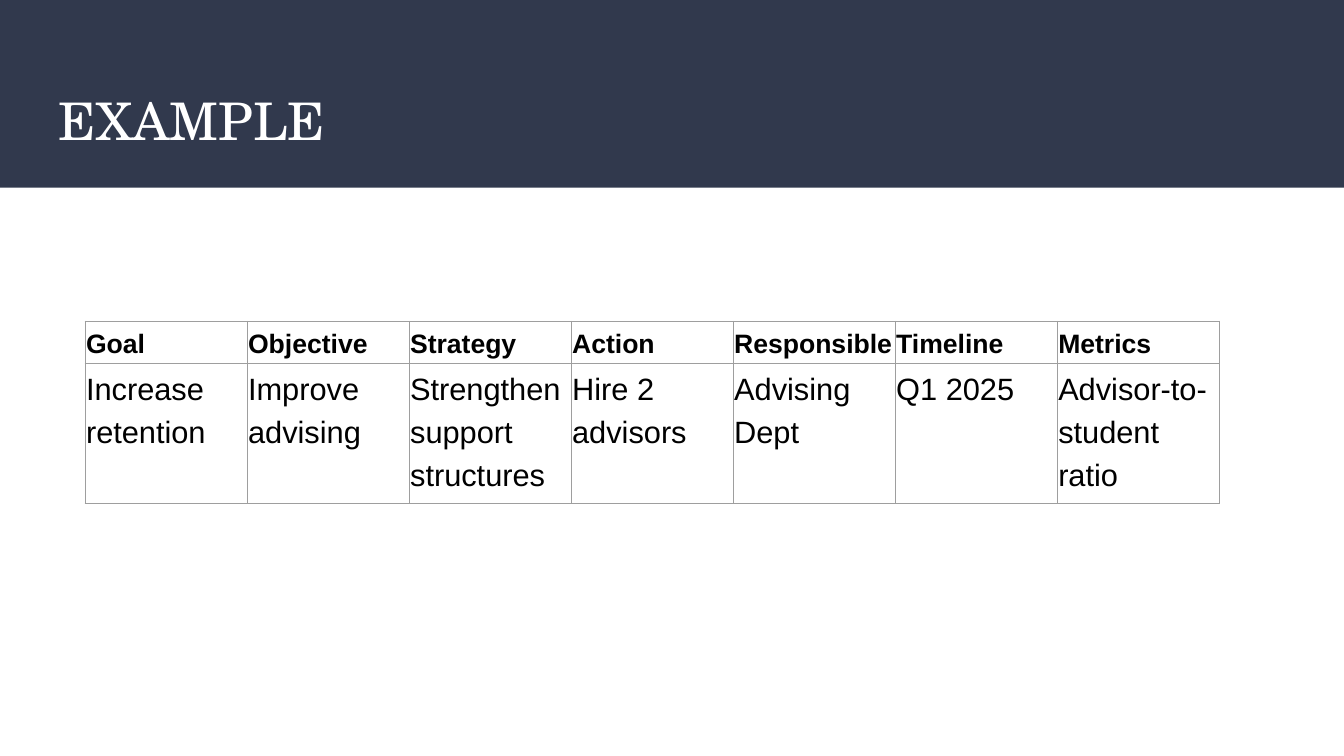
import pptx
import pptx.dml.color
import pptx.enum.shapes
import pptx.enum.text
import pptx.oxml
import pptx.oxml.ns
import pptx.util

Pt = pptx.util.Pt
COLORS = {"band": "31394D", "title": "FFFFFF", "text": "000000", "border": "9E9E9E"}
HEADINGS = ["Goal", "Objective", "Strategy", "Action", "Responsible", "Timeline", "Metrics"]
PLAN = ["Increase retention", "Improve advising", "Strengthen support structures",
        "Hire 2 advisors", "Advising Dept", "Q1 2025", "Advisor-to-student ratio"]


def color(name):
    return pptx.dml.color.RGBColor.from_string(COLORS[name])


def write_text(frame, text, size, font="Arial", fill="text", bold=False,
               line_spacing=None, space_after=None):
    para = frame.paragraphs[0]
    para.line_spacing = line_spacing
    if space_after is not None:
        para.space_after = Pt(space_after)
    span = para.add_run()
    span.text = text
    span.font.size = Pt(size)
    span.font.name = font
    span.font.bold = bold
    span.font.color.rgb = color(fill)


class SlideBuilder:
    def __init__(self, page):
        self.page = page
        self.title_font = "TeX Gyre Schola"
        self.border_width = 0.75

    def band(self, left, top, width, height):
        box = self.page.shapes.add_shape(
            pptx.enum.shapes.MSO_SHAPE.RECTANGLE, Pt(left), Pt(top), Pt(width), Pt(height))
        box.shadow.inherit = False
        box.fill.solid()
        box.fill.fore_color.rgb = color("band")
        box.line.fill.background()

    def title(self, text, left, top, width, height, margin):
        box = self.page.shapes.add_textbox(Pt(left), Pt(top), Pt(width), Pt(height))
        frame = box.text_frame
        frame.word_wrap = True
        frame.vertical_anchor = pptx.enum.text.MSO_ANCHOR.MIDDLE
        frame.margin_left = frame.margin_right = Pt(margin)
        frame.margin_top = frame.margin_bottom = Pt(margin)
        write_text(frame, text, 37, font=self.title_font, fill="title")

    def border(self, cell):
        properties = cell._tc.get_or_add_tcPr()
        for index, side in enumerate(("lnL", "lnR", "lnT", "lnB")):
            line = pptx.oxml.parse_xml(
                f'<a:{side} {pptx.oxml.ns.nsdecls("a")} w="{Pt(self.border_width)}">'
                f'<a:solidFill><a:srgbClr val="{COLORS["border"]}"/></a:solidFill>'
                f'</a:{side}>')
            properties.insert(index, line)

    def table(self, rows, left, top, column_width, row_height, margin):
        columns = len(rows[0])
        table = self.page.shapes.add_table(
            len(rows), columns, Pt(left), Pt(top),
            Pt(column_width * columns), Pt(row_height * len(rows))).table
        table.first_row = table.horz_banding = False
        for column in table.columns:
            column.width = Pt(column_width)
        for row_index, texts in enumerate(rows):
            heading = row_index == 0
            for column_index, text in enumerate(texts):
                cell = table.cell(row_index, column_index)
                cell.fill.background()
                cell.margin_left = cell.margin_right = Pt(margin)
                cell.margin_top = cell.margin_bottom = Pt(margin)
                self.border(cell)
                write_text(cell.text_frame, text, 19 if heading else 22, bold=heading,
                           line_spacing=1.25, space_after=8)


def main():
    deck = pptx.Presentation()
    deck.slide_width, deck.slide_height = Pt(960), Pt(540)
    builder = SlideBuilder(deck.slides.add_slide(deck.slide_layouts[6]))

    # Header band and title
    builder.band(0, 0, 960, 134)
    builder.title("EXAMPLE", 32.5, 52.5, 894, 65.5, margin=9.5)

    # Action plan
    builder.table([HEADINGS, PLAN], 60.75, 229.5, column_width=115.75,
                  row_height=30, margin=0.75)

    deck.save("out.pptx")


if __name__ == "__main__":
    main()
